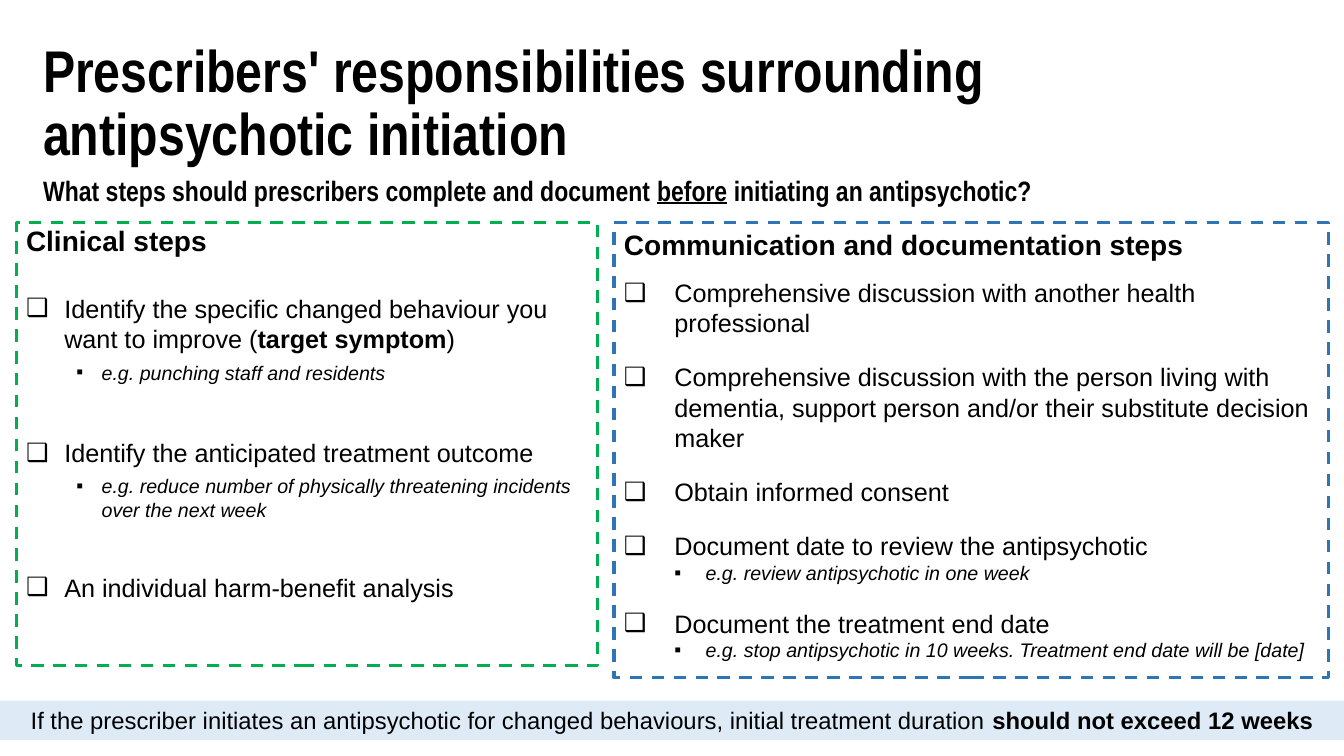
import pptx
import pptx.util
import pptx.dml.color
import pptx.enum.dml
import pptx.enum.shapes
import pptx.enum.text
from lxml import etree
from pptx.oxml.ns import qn

Inches, Pt = pptx.util.Inches, pptx.util.Pt
RGBColor = pptx.dml.color.RGBColor
ANCHOR = pptx.enum.text.MSO_ANCHOR
ALIGN = pptx.enum.text.PP_ALIGN

BLACK = RGBColor(0x00, 0x00, 0x00)
GREEN = RGBColor(0x00, 0xB0, 0x50)
BLUE = RGBColor(0x2E, 0x75, 0xB6)
PALE_BLUE = RGBColor(0xDE, 0xEB, 0xF7)

# Content: runs are (text, style), where style holds "b", "i" and/or "u"
TITLE = [("Prescribers' responsibilities surrounding antipsychotic initiation", "b")]
QUESTION = [
    ("What steps should prescribers complete and document ", "b"),
    ("before", "bu"),
    (" initiating an antipsychotic?", "b"),
]
DURATION = [
    ("If the prescriber initiates an antipsychotic for changed behaviours, initial treatment duration ", ""),
    ("should not exceed 12 weeks", "b"),
]

# Paragraphs: (kind, space before in points, runs)
CLINICAL = [
    ("heading", 0, [("Clinical steps", "b")]),
    ("step", 25, [
        ("Identify the specific changed behaviour you want to improve (", ""),
        ("target symptom", "b"),
        (")", ""),
    ]),
    ("example", 5, [("e.g. punching staff and residents", "i")]),
    ("step", 38, [("Identify the anticipated treatment outcome", "")]),
    ("example", 5, [("e.g. reduce number of physically threatening incidents over the next week", "i")]),
    ("step", 36, [("An individual harm-benefit analysis", "")]),
]
COMMUNICATION = [
    ("heading", 0, [("Communication and documentation steps", "b")]),
    ("step", 11.5, [("Comprehensive discussion with another health professional", "")]),
    ("step", 17, [("Comprehensive discussion with the person living with dementia, "
                   "support person and/or their substitute decision maker", "")]),
    ("step", 17, [("Obtain informed consent", "")]),
    ("step", 17, [("Document date to review the antipsychotic", "")]),
    ("example", 0, [("e.g. review antipsychotic in one week", "i")]),
    ("step", 17, [("Document the treatment end date", "")]),
    ("example", 0, [("e.g. stop antipsychotic in 10 weeks. Treatment end date will be [date]", "i")]),
]

# Panels: box, outline, heading line spacing, (left margin, hang) by kind, paragraphs
PANELS = [
    ((0.16, 2.21, 5.77, 4.39), GREEN, 0.9,
     {"step": (0.38, 0.38), "example": (0.75, 0.25)}, CLINICAL),
    ((6.09, 2.21, 7.09, 4.51), BLUE, 1.0,
     {"step": (0.5, 0.5), "example": (0.81, 0.31)}, COMMUNICATION),
]
SIZES = {"heading": 20, "step": 18, "example": 14}
BULLETS = {"step": "❑", "example": "▪"}


def add_runs(p, runs, size, font="Arial"):
    for text, style in runs:
        r = p.add_run()
        r.text = text
        r.font.name, r.font.size = font, Pt(size)
        r.font.color.rgb = BLACK
        r.font.bold = "b" in style
        r.font.italic = "i" in style
        r.font.underline = "u" in style


def add_bullet(p, char, margin, hang):
    pPr = p._p.get_or_add_pPr()
    pPr.set("marL", str(Inches(margin)))
    pPr.set("indent", str(-Inches(hang)))
    etree.SubElement(pPr, qn("a:buFont")).set("typeface", "Arial")
    etree.SubElement(pPr, qn("a:buChar")).set("char", char)


def add_box(s, box, fill=None, outline=None, anchor=ANCHOR.TOP):
    sp = s.shapes.add_shape(pptx.enum.shapes.MSO_SHAPE.RECTANGLE, *map(Inches, box))
    sp.shadow.inherit = False
    if fill is None:
        sp.fill.background()
    else:
        sp.fill.solid()
        sp.fill.fore_color.rgb = fill
    if outline is None:
        sp.line.fill.background()
    else:
        sp.line.color.rgb = outline
        sp.line.width = Pt(2.25)
        sp.line.dash_style = pptx.enum.dml.MSO_LINE.DASH
    sp.text_frame.word_wrap = True
    sp.text_frame.vertical_anchor = anchor
    return sp.text_frame


def add_headline(s, box, runs, size):
    tf = s.shapes.add_textbox(*map(Inches, box)).text_frame
    tf.word_wrap = True
    tf.paragraphs[0].line_spacing = 0.9
    add_runs(tf.paragraphs[0], runs, size, "Arial Narrow")


def add_panel(s, box, outline, heading_spacing, indents, paragraphs):
    tf = add_box(s, box, outline=outline)
    for i, (kind, before, runs) in enumerate(paragraphs):
        p = tf.add_paragraph() if i else tf.paragraphs[0]
        p.alignment = ALIGN.LEFT
        if kind in BULLETS:
            p.level = int(kind == "example")
            add_bullet(p, BULLETS[kind], *indents[kind])
        else:
            p.line_spacing = heading_spacing
        if before:
            p.space_before = Pt(before)
        add_runs(p, runs, SIZES[kind])


def main():
    prs = pptx.Presentation()
    prs.slide_width, prs.slide_height = Inches(13.33), Inches(7.5)
    s = prs.slides.add_slide(prs.slide_layouts[6])

    # Duration bar
    p = add_box(s, (0, 6.95, 13.33, 0.39), fill=PALE_BLUE, anchor=ANCHOR.MIDDLE).paragraphs[0]
    p.alignment = ALIGN.CENTER
    add_runs(p, DURATION, 17)

    # Checklists
    for panel in PANELS:
        add_panel(s, *panel)

    # Title and question
    add_headline(s, (0.33, 0.36, 10.04, 0.81), TITLE, 42)
    add_headline(s, (0.33, 1.71, 11.42, 0.37), QUESTION, 20)

    prs.save("out.pptx")


if __name__ == "__main__":
    main()
